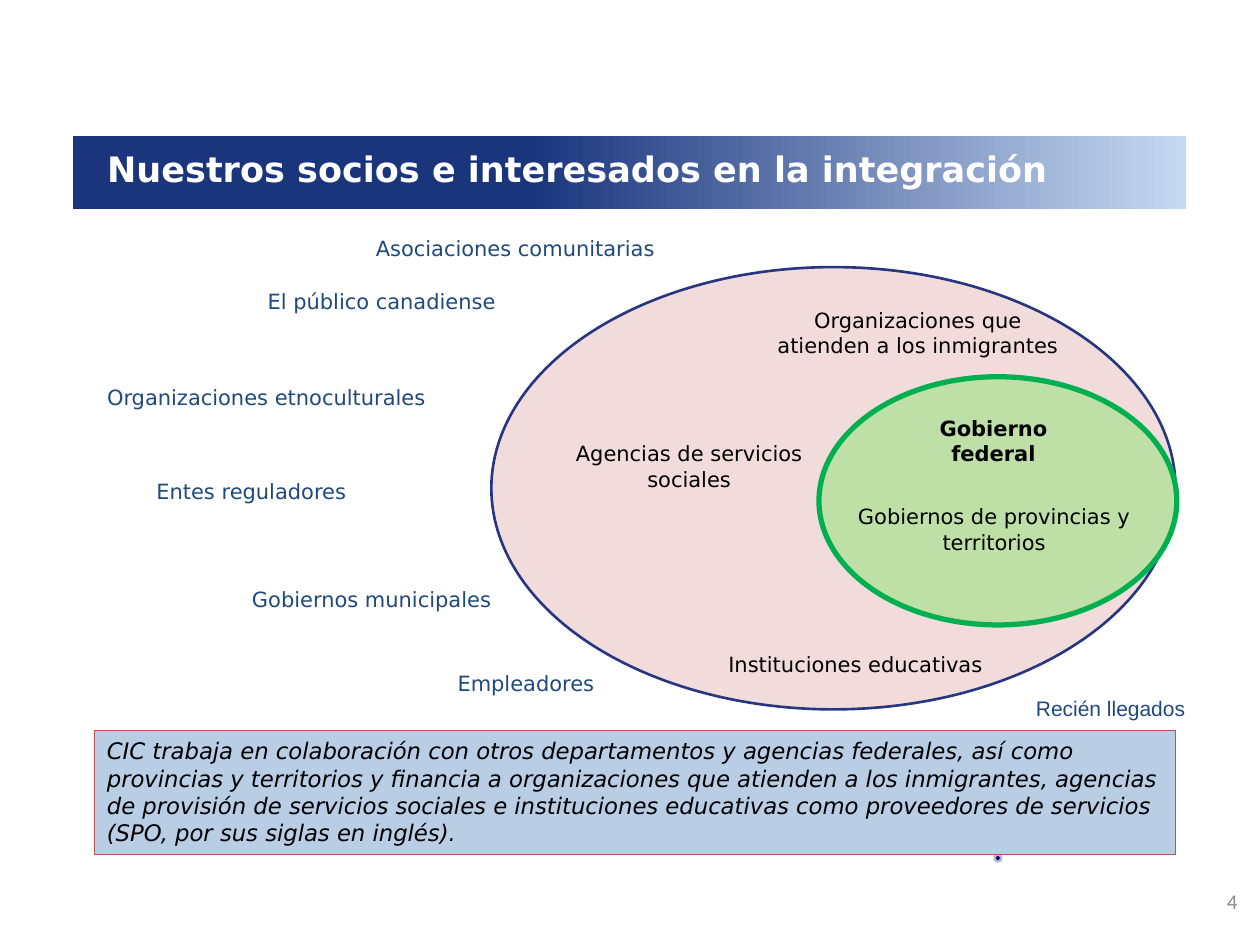
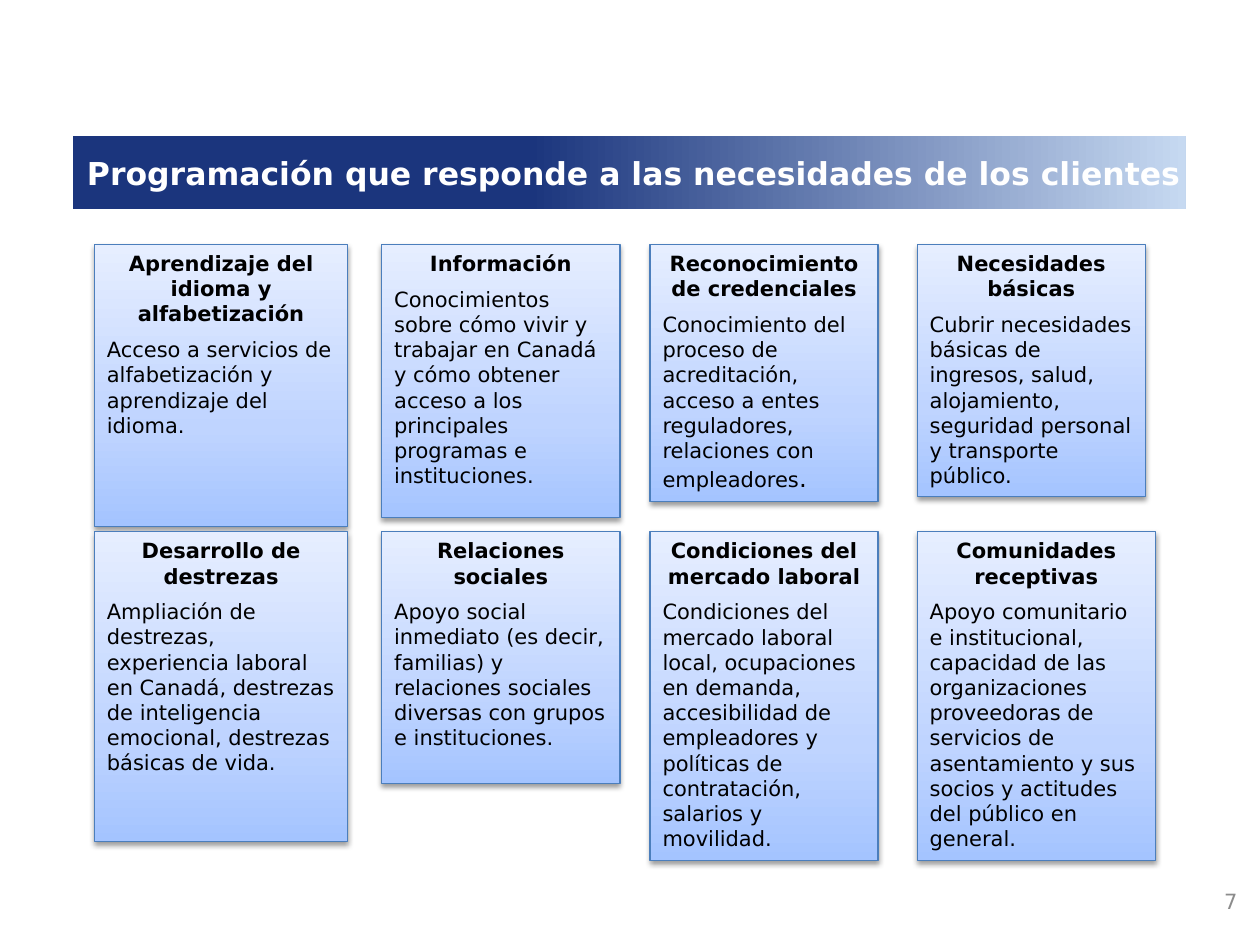
"""Builds two slides on integration partners and client-centred programming."""
from dataclasses import dataclass
from typing import NamedTuple

from pptx import Presentation
from pptx.dml.color import RGBColor
from pptx.enum.shapes import MSO_SHAPE
from pptx.enum.text import MSO_ANCHOR, MSO_AUTO_SIZE, PP_ALIGN
from pptx.oxml import parse_xml
from pptx.oxml.ns import nsdecls, qn
from pptx.util import Inches, Pt

RECT, OVAL = MSO_SHAPE.RECTANGLE, MSO_SHAPE.OVAL
LEFT, CENTER, RIGHT = PP_ALIGN.LEFT, PP_ALIGN.CENTER, PP_ALIGN.RIGHT
TOP, MIDDLE = MSO_ANCHOR.TOP, MSO_ANCHOR.MIDDLE
NO_FIT = MSO_AUTO_SIZE.NONE
COLUMNS, ROWS = 100, 75
TITLE_ONLY = 5


@dataclass(frozen=True)
class Theme:
    """Colours, fonts and type sizes of the deck."""
    font: str = "DejaVu Sans"
    newcomer_font: str = "Arial"
    number_font: str = "Calibri"
    body: int = 12
    note: int = 13
    full_stop: int = 14
    title: int = 20
    long_title: int = 18
    black: str = "000000"
    white: str = "FFFFFF"
    gray: str = "8C8C8C"
    partner: str = "1F497D"
    band: tuple = ((41, "1B357D"), (100, "C6D9F1"))
    card: tuple = ((0, "A4C4FF"), (35, "BFD4FF"), (100, "E6EEFF"))
    card_line: str = "4B7EBC"
    providers: str = "F2DCDB"
    providers_line: str = "263680"
    government: str = "BEDFA5"
    government_line: str = "00B050"
    note_fill: str = "B9CDE5"
    note_line: str = "C0504D"
    dot: str = "000066"
    dot_line: str = "B2B6D2"


class Label(NamedTuple):
    """A short centred text and its place on the grid."""
    text: str
    left: float
    top: float
    width: float
    format: dict = {}


class Need(NamedTuple):
    """A client need and the size of its card."""
    heading: str
    detail: str
    width: float
    height: float
    ending: str = ""


THEME = Theme()
OUTSIDE = {"color": THEME.partner}

LABELS = [
    Label("Gobierno federal", 71, 32.5, 15.7, {"bold": True}),
    Label("Gobiernos de provincias y territorios", 65.9, 39.5, 26),
    Label("Organizaciones que atienden a los inmigrantes", 60.2, 23.9, 25.3),
    Label("Agencias de servicios sociales", 43.5, 34.5, 22.4),
    Label("Instituciones educativas", 56.3, 51.2, 23.2),
    Label("Asociaciones comunitarias", 21.8, 18.2, 38.2, OUTSIDE),
    Label("El público canadiense", 19.3, 22.4, 22, OUTSIDE),
    Label("Organizaciones etnoculturales", 0, 30, 42.3, OUTSIDE),
    Label("Entes reguladores", 3.3, 37.5, 33.3, OUTSIDE),
    Label("Gobiernos municipales", 8.6, 46.1, 41.8, OUTSIDE),
    Label("Empleadores", 33.1, 52.7, 17.3, OUTSIDE),
    Label("Recién llegados", 79.5, 54.7, 17.3,
          {**OUTSIDE, "font": THEME.newcomer_font}),
]

NOTE = ("CIC trabaja en colaboración con otros departamentos y agencias "
        "federales, así como provincias y territorios y financia a "
        "organizaciones que atienden a los inmigrantes, agencias de provisión "
        "de servicios sociales e instituciones educativas como proveedores de "
        "servicios (SPO, por sus siglas en inglés).")

CARD_LEFTS = (7.5, 30.3, 51.6, 72.8)
CARD_TOPS = (19.4, 42.2)
NEEDS = [
    [
        Need("Aprendizaje del idioma y alfabetización",
             "Acceso a servicios de alfabetización y aprendizaje del idioma.",
             20.1, 22.4),
        Need("Información",
             "Conocimientos sobre cómo vivir y trabajar en Canadá y cómo "
             "obtener acceso a los principales programas e instituciones.",
             18.9, 21.7),
        Need("Reconocimiento de credenciales",
             "Conocimiento del proceso de acreditación, acceso a entes "
             "reguladores, relaciones con empleadores",
             18.1, 20.4, "."),
        Need("Necesidades básicas",
             "Cubrir necesidades básicas de ingresos, salud, alojamiento, "
             "seguridad personal y transporte público.",
             18.1, 20),
    ],
    [
        Need("Desarrollo de destrezas",
             "Ampliación de destrezas, experiencia laboral en Canadá, "
             "destrezas de inteligencia emocional, destrezas básicas de vida.",
             20.1, 24.6),
        Need("Relaciones sociales",
             "Apoyo social inmediato (es decir, familias) y relaciones "
             "sociales diversas con grupos e instituciones.",
             18.9, 20),
        Need("Condiciones del mercado laboral",
             "Condiciones del mercado laboral local, ocupaciones en demanda, "
             "accesibilidad de empleadores y políticas de contratación, "
             "salarios y movilidad.",
             18.1, 26.1),
        Need("Comunidades receptivas",
             "Apoyo comunitario e institucional, capacidad de las "
             "organizaciones proveedoras de servicios de asentamiento y sus "
             "socios y actitudes del público en general.",
             18.9, 26.1),
    ],
]


def write(paragraph, text, *, size=THEME.body, color=THEME.black,
          font=THEME.font, bold=False, italic=False, align=LEFT, before=0):
    """Append a formatted run to a paragraph."""
    paragraph.alignment = align
    paragraph.space_before = Pt(before)
    run = paragraph.add_run()
    run.text = text
    run.font.name = font
    run.font.size = Pt(size)
    run.font.bold = bold
    run.font.italic = italic
    run.font.color.rgb = RGBColor.from_string(color)


class Deck:
    """Holds the theme and the current slide and draws on its grid."""

    def __init__(self, theme):
        """Start an empty deck whose layout carries the title band."""
        self.theme = theme
        self.presentation = Presentation()
        self.presentation.slide_width = Inches(10)
        self.presentation.slide_height = Inches(7.5)
        self.layout = self.presentation.slide_layouts[TITLE_ONLY]
        self.slide = None

    def place(self, left, top, width, height):
        """Turn grid columns and rows into slide lengths."""
        column = self.presentation.slide_width / COLUMNS
        row = self.presentation.slide_height / ROWS
        return (round(left * column), round(top * row),
                round(width * column), round(height * row))

    def new_slide(self, title, number, *, box, size, number_font):
        """Add a slide with its title and page number."""
        first = self.slide is None
        self.slide = self.presentation.slides.add_slide(self.layout)
        if first:
            band = self.shape(RECT, (5.8, 10.8, 88.3, 5.8))
            self.gradient(band, self.theme.band, 0)
            self.layout.shapes.element.append(band.element)
        heading = self.slide.shapes.title
        heading.left, heading.top, heading.width, heading.height = self.place(*box)
        frame = self.frame(heading, MIDDLE)
        write(frame.paragraphs[0], title, size=size, bold=True,
              color=self.theme.white)
        self.text(number, (90, 69.5, 9.2, 4), anchor=MIDDLE, align=RIGHT,
                  color=self.theme.gray, font=number_font)

    def frame(self, holder, anchor=TOP):
        """Prepare a wrapping text frame of fixed size."""
        frame = holder.text_frame
        frame.word_wrap = True
        frame.auto_size = NO_FIT
        frame.vertical_anchor = anchor
        return frame

    def text(self, text, box, *, anchor=TOP, **style):
        """Add a text box holding one paragraph."""
        holder = self.slide.shapes.add_textbox(*self.place(*box))
        write(self.frame(holder, anchor).paragraphs[0], text, **style)

    def shape(self, kind, box, *, fill=None, line=None, weight=1):
        """Add a preset shape with flat fill and outline."""
        shape = self.slide.shapes.add_shape(kind, *self.place(*box))
        shape.shadow.inherit = False
        if fill:
            shape.fill.solid()
            shape.fill.fore_color.rgb = RGBColor.from_string(fill)
        else:
            shape.fill.background()
        if line:
            shape.line.color.rgb = RGBColor.from_string(line)
            shape.line.width = Pt(weight)
        else:
            shape.line.fill.background()
        return shape

    def gradient(self, shape, stops, angle):
        """Fill a shape with a linear gradient of percent and colour stops."""
        shape.fill.gradient()
        shape.fill.gradient_angle = angle
        stop_list = next(shape.element.iter(qn("a:gsLst")))
        for old_stop in list(stop_list):
            stop_list.remove(old_stop)
        for percent, color in stops:
            stop_list.append(parse_xml(
                f'<a:gs {nsdecls("a")} pos="{percent * 1000}">'
                f'<a:srgbClr val="{color}"/></a:gs>'))

    def drop_shadow(self, shape):
        """Give a shape a soft shadow below it."""
        effects = next(shape.element.iter(qn("a:effectLst")))
        effects.append(parse_xml(
            f'<a:outerShdw {nsdecls("a")} blurRad="{Pt(3.1)}" '
            f'dist="{Pt(1.6)}" dir="5400000" rotWithShape="0">'
            f'<a:srgbClr val="{self.theme.black}"><a:alpha val="38000"/>'
            '</a:srgbClr></a:outerShdw>'))

    def card(self, need, left, top):
        """Add a shaded card with a heading and its detail."""
        card = self.shape(RECT, (left, top, need.width, need.height),
                          line=self.theme.card_line, weight=0.75)
        self.gradient(card, self.theme.card, 90)
        self.drop_shadow(card)
        frame = self.frame(card)
        write(frame.paragraphs[0], need.heading, bold=True, align=CENTER)
        detail = frame.add_paragraph()
        write(detail, need.detail, before=6)
        if need.ending:
            write(detail, need.ending, before=6, size=self.theme.full_stop)


def partners_slide(deck):
    """Draw the nested circles of partners and stakeholders."""
    theme = deck.theme
    deck.new_slide("Nuestros socios e interesados en la integración", "4",
                   box=(7.5, 10, 87.5, 6.7), size=theme.title,
                   number_font=theme.number_font)
    deck.shape(OVAL, (39, 21.2, 54.3, 35.1), fill=theme.providers,
               line=theme.providers_line, weight=1.5)
    deck.shape(OVAL, (78.9, 67.8, 0.6, 0.6), line=theme.dot_line)
    deck.shape(OVAL, (79, 67.9, 0.4, 0.4), fill=theme.dot,
               line=theme.dot_line, weight=0.5)
    deck.shape(OVAL, (65, 29.9, 28.4, 19.7), fill=theme.government,
               line=theme.government_line, weight=3)
    for label in LABELS:
        deck.text(label.text, (label.left, label.top, label.width, 3),
                  align=CENTER, **label.format)
    note = deck.shape(RECT, (7.5, 58, 85.8, 9.8), fill=theme.note_fill,
                      line=theme.note_line, weight=0.75)
    write(deck.frame(note).paragraphs[0], NOTE, size=theme.note, italic=True)


def needs_slide(deck):
    """Draw the grid of client needs."""
    theme = deck.theme
    deck.new_slide("Programación que responde a las necesidades de los clientes",
                   "7", box=(5.9, 10.4, 89.1, 6.7), size=theme.long_title,
                   number_font=theme.font)
    for top, needs in zip(CARD_TOPS, NEEDS):
        for left, need in zip(CARD_LEFTS, needs):
            deck.card(need, left, top)


def main():
    """Build both slides and save the deck."""
    deck = Deck(THEME)
    partners_slide(deck)
    needs_slide(deck)
    deck.presentation.save("out.pptx")


if __name__ == "__main__":
    main()
